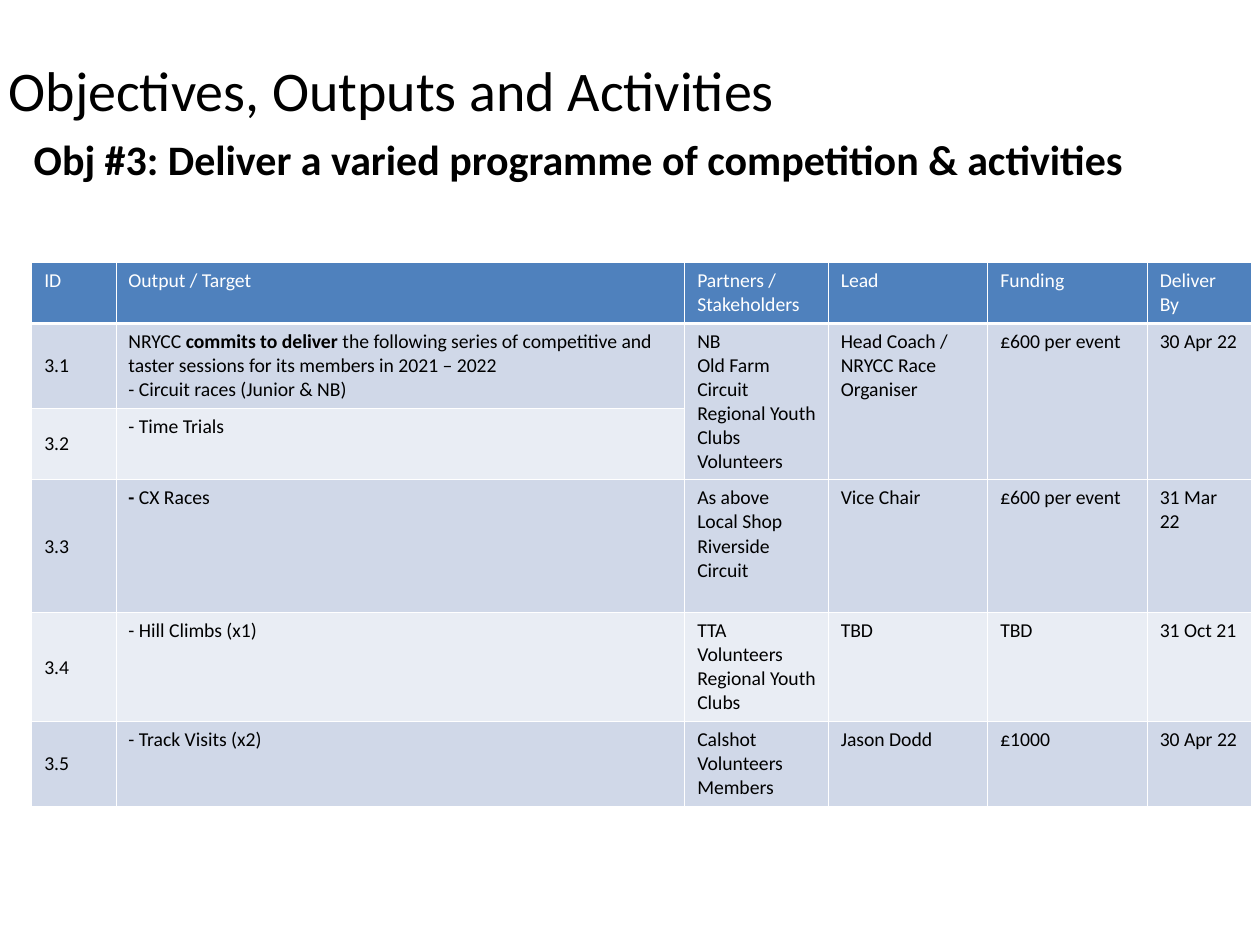
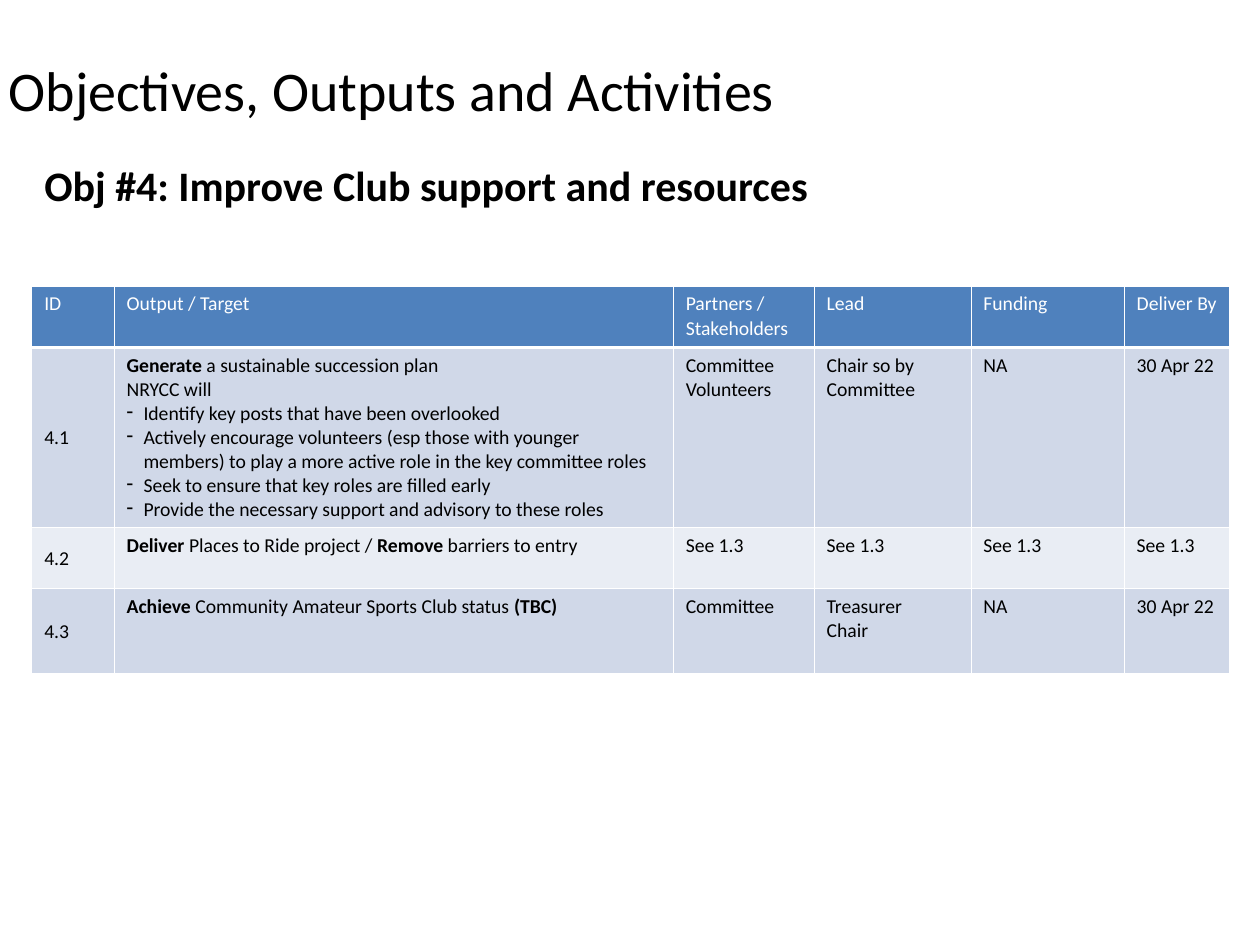
"""Build two slides of club objectives, each with a heading pair and a table."""
from dataclasses import dataclass

from lxml.etree import SubElement
from pptx import Presentation
from pptx.dml.color import RGBColor
from pptx.enum.text import MSO_ANCHOR
from pptx.oxml import parse_xml
from pptx.oxml.ns import qn
from pptx.util import Pt

PX = 9144
WHITE = RGBColor(0xFF, 0xFF, 0xFF)
BLACK = RGBColor(0x00, 0x00, 0x00)
HEADER_BLUE = RGBColor(0x4F, 0x81, 0xBD)
BAND_DARK = RGBColor(0xD0, 0xD8, 0xE8)
BAND_LIGHT = RGBColor(0xE9, 0xED, 0xF4)
DRAWING_NS = "http://schemas.openxmlformats.org/drawingml/2006/main"

TITLE = "Objectives, Outputs and Activities"
TITLE_FORMAT = {"name": "Calibri", "size": Pt(45.5), "bold": False}
SUBTITLE_FORMAT = {"name": "Calibri", "size": Pt(34.1), "bold": True}
CELL_FORMAT = {"name": "Calibri", "size": Pt(16), "bold": False}
TITLE_MARGINS = {"margin_left": 10, "margin_top": 5, "margin_right": 10, "margin_bottom": 5}
SUBTITLE_MARGINS = {"margin_left": 14, "margin_top": 7, "margin_right": 14, "margin_bottom": 65}
CELL_MARGINS = {"margin_left": 14, "margin_top": 7, "margin_right": 14, "margin_bottom": 7}
HEADING_WIDTH, HEADING_HEIGHT = 1280, 178
TABLE_LEFT = 36
BULLET_INDENT = 19
BULLET_MARK = "> "
BOLD_MARK = "*"
HEADER = ("ID", "Output / Target", "Partners / Stakeholders", "Lead", "Funding", "Deliver By")


@dataclass(frozen=True)
class Objective:
    """One slide: its subtitle, table grid and rows; None continues the cell above."""

    subtitle: str
    subtitle_left: int
    subtitle_top: int
    table_top: int
    column_widths: tuple
    row_heights: tuple
    rows: tuple


OBJECTIVES = (
    Objective(
        "Obj #3: Deliver a varied programme of competition & activities",
        24, 119, 296,
        (95, 642, 162, 180, 180, 117),
        (69, 96, 81, 150, 123, 96),
        (
            ("3.1",
             "NRYCC *commits to deliver *the following series of competitive and taster "
             "sessions for its members in 2021 – 2022\n- Circuit races (Junior & NB)",
             "NB\nOld Farm Circuit\nRegional Youth Clubs\nVolunteers",
             "Head Coach / NRYCC Race Organiser", "£600 per event", "30 Apr 22"),
            ("3.2", "- Time Trials", None, None, None, None),
            ("3.3", "*- *CX Races", "As above\nLocal Shop\nRiverside Circuit",
             "Vice Chair", "£600 per event", "31 Mar 22"),
            ("3.4", "- Hill Climbs (x1)", "TTA\nVolunteers\nRegional Youth Clubs",
             "TBD", "TBD", "31 Oct 21"),
            ("3.5", "- Track Visits (x2)", "Calshot\nVolunteers\nMembers",
             "Jason Dodd", "£1000", "30 Apr 22"),
        ),
    ),
    Objective(
        "Obj #4: Improve Club support and resources",
        36, 148, 323,
        (93, 631, 159, 177, 173, 119),
        (69, 204, 69, 96),
        (
            ("4.1",
             "*Generate *a sustainable succession plan\nNRYCC will\n"
             "> Identify key posts that have been overlooked\n"
             "> Actively encourage volunteers (esp those with younger members) "
             "to play a more active role in the key committee roles\n"
             "> Seek to ensure that key roles are filled early\n"
             "> Provide the necessary support and advisory to these roles",
             "Committee\nVolunteers", "Chair so by Committee", "NA", "30 Apr 22"),
            ("4.2", "*Deliver *Places to Ride project / *Remove *barriers to entry",
             "See 1.3", "See 1.3", "See 1.3", "See 1.3"),
            ("4.3", "*Achieve *Community Amateur Sports Club status *(TBC)*",
             "Committee", "Treasurer\nChair", "NA", "30 Apr 22"),
        ),
    ),
)


def set_margins(target, margins: dict) -> None:
    """Apply margins given in px."""
    for name, length in margins.items():
        setattr(target, name, length * PX)


def add_span(para, text: str, formats: dict, color: RGBColor) -> None:
    """Append one formatted run."""
    span = para.add_run()
    span.text = text
    for name, value in formats.items():
        setattr(span.font, name, value)
    span.font.color.rgb = color


def set_bullet(para) -> None:
    """Give a paragraph a hanging dash."""
    properties = para._p.get_or_add_pPr()
    properties.set("marL", str(BULLET_INDENT * PX))
    properties.set("indent", str(-BULLET_INDENT * PX))
    SubElement(properties, qn("a:buChar"), char="-")


def fill_text(frame, text: str, formats: dict, color: RGBColor) -> None:
    """Write lines as paragraphs, with bold parts and bullets by their marks."""
    for index, line in enumerate(text.split("\n")):
        para = frame.add_paragraph() if index else frame.paragraphs[0]
        if line.startswith(BULLET_MARK):
            set_bullet(para)
        for part, words in enumerate(line.removeprefix(BULLET_MARK).split(BOLD_MARK)):
            if words:
                bold = formats["bold"] or part % 2 == 1
                add_span(para, words, {**formats, "bold": bold}, color)


def add_heading(page, text: str, left: int, top: int, formats: dict, margins: dict) -> None:
    """Add a heading box centred vertically."""
    box = page.shapes.add_textbox(left * PX, top * PX, HEADING_WIDTH * PX, HEADING_HEIGHT * PX)
    frame = box.text_frame
    frame.word_wrap = True
    frame.vertical_anchor = MSO_ANCHOR.MIDDLE
    set_margins(frame, margins)
    fill_text(frame, text, formats, BLACK)


def set_borders(cell, bottom_points: int) -> None:
    """Draw white borders around a cell."""
    properties = cell._tc.get_or_add_tcPr()
    widths = {"lnL": 1, "lnR": 1, "lnT": 1, "lnB": bottom_points}
    for index, (side, points) in enumerate(widths.items()):
        properties.insert(index, parse_xml(
            f'<a:{side} xmlns:a="{DRAWING_NS}" w="{Pt(points)}"><a:solidFill>'
            f'<a:srgbClr val="{WHITE}"/></a:solidFill></a:{side}>'))


def add_objective_table(page, objective: Objective) -> None:
    """Add the table with its header, bands and merged cells."""
    rows = (HEADER, *objective.rows)
    widths, heights = objective.column_widths, objective.row_heights
    table = page.shapes.add_table(
        len(rows), len(HEADER), TABLE_LEFT * PX, objective.table_top * PX,
        sum(widths) * PX, sum(heights) * PX).table
    for column, width in zip(table.columns, widths):
        column.width = width * PX
    for row, height in zip(table.rows, heights):
        row.height = height * PX
    for row_index, texts in enumerate(rows):
        is_header = row_index == 0
        band = BAND_DARK if row_index % 2 else BAND_LIGHT
        for column_index, text in enumerate(texts):
            cell = table.cell(row_index, column_index)
            cell.fill.solid()
            cell.fill.fore_color.rgb = HEADER_BLUE if is_header else band
            set_margins(cell, CELL_MARGINS)
            set_borders(cell, 3 if is_header else 1)
            if text is None:
                table.cell(row_index - 1, column_index).merge(cell)
                continue
            if column_index == 0 and not is_header:
                cell.vertical_anchor = MSO_ANCHOR.MIDDLE
            fill_text(cell.text_frame, text, CELL_FORMAT, WHITE if is_header else BLACK)


def main() -> None:
    """Build and save the deck."""
    deck = Presentation()
    deck.slide_width, deck.slide_height = 1422 * PX, 1067 * PX
    for objective in OBJECTIVES:
        page = deck.slides.add_slide(deck.slide_layouts[6])
        add_heading(page, TITLE, 0, 12, TITLE_FORMAT, TITLE_MARGINS)
        add_objective_table(page, objective)
        add_heading(page, objective.subtitle, objective.subtitle_left,
                    objective.subtitle_top, SUBTITLE_FORMAT, SUBTITLE_MARGINS)
    deck.save("out.pptx")


if __name__ == "__main__":
    main()
